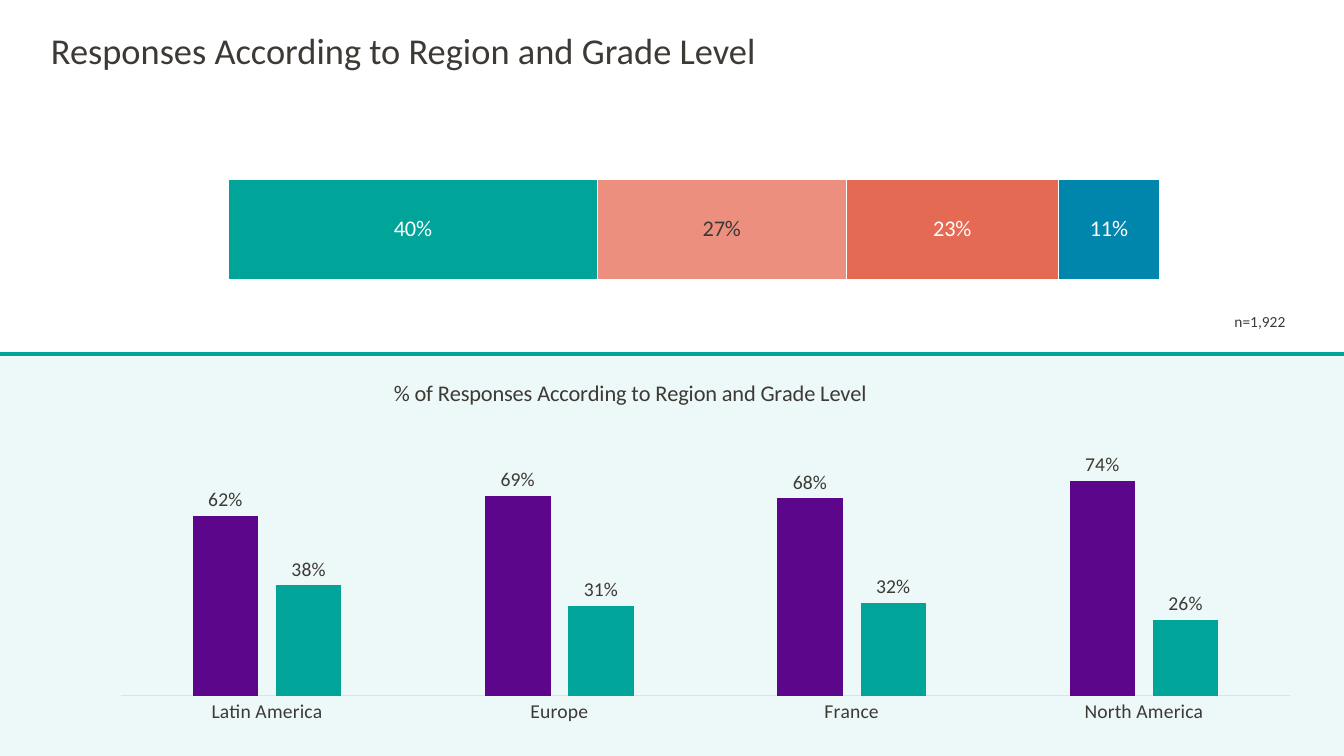
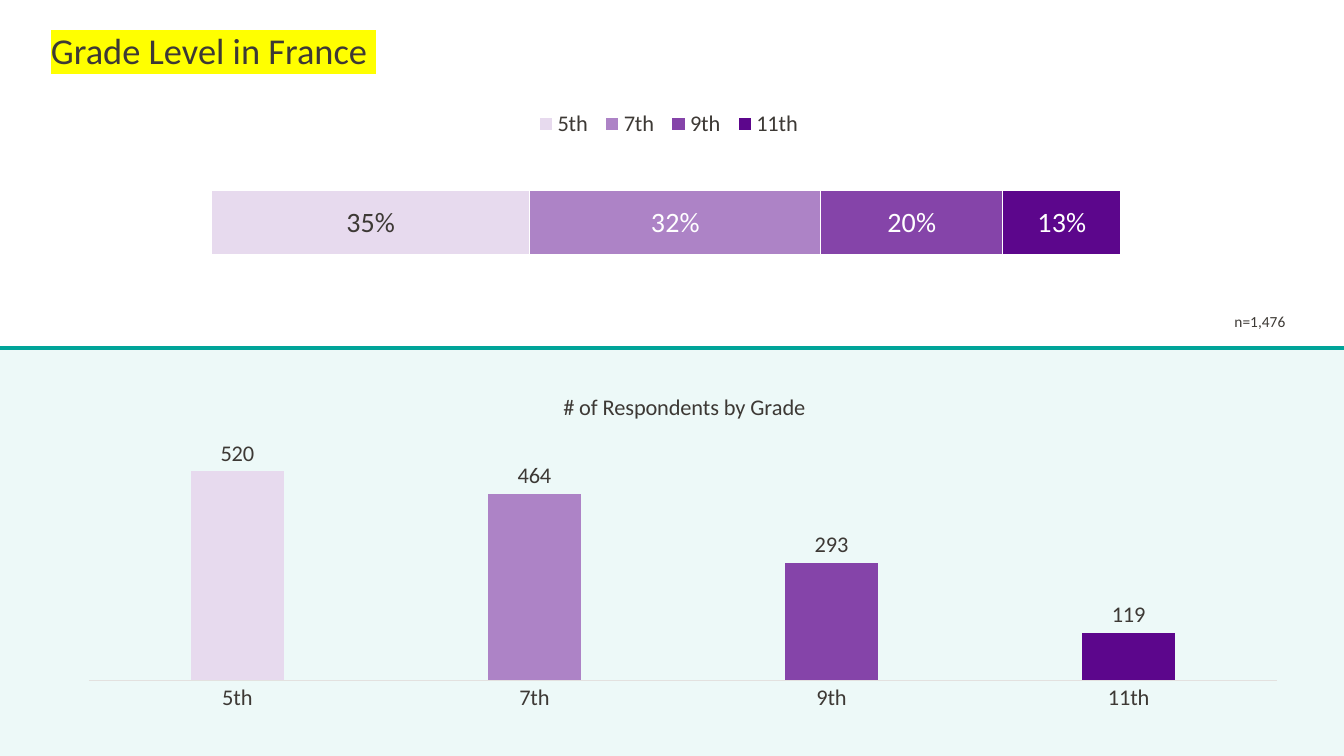
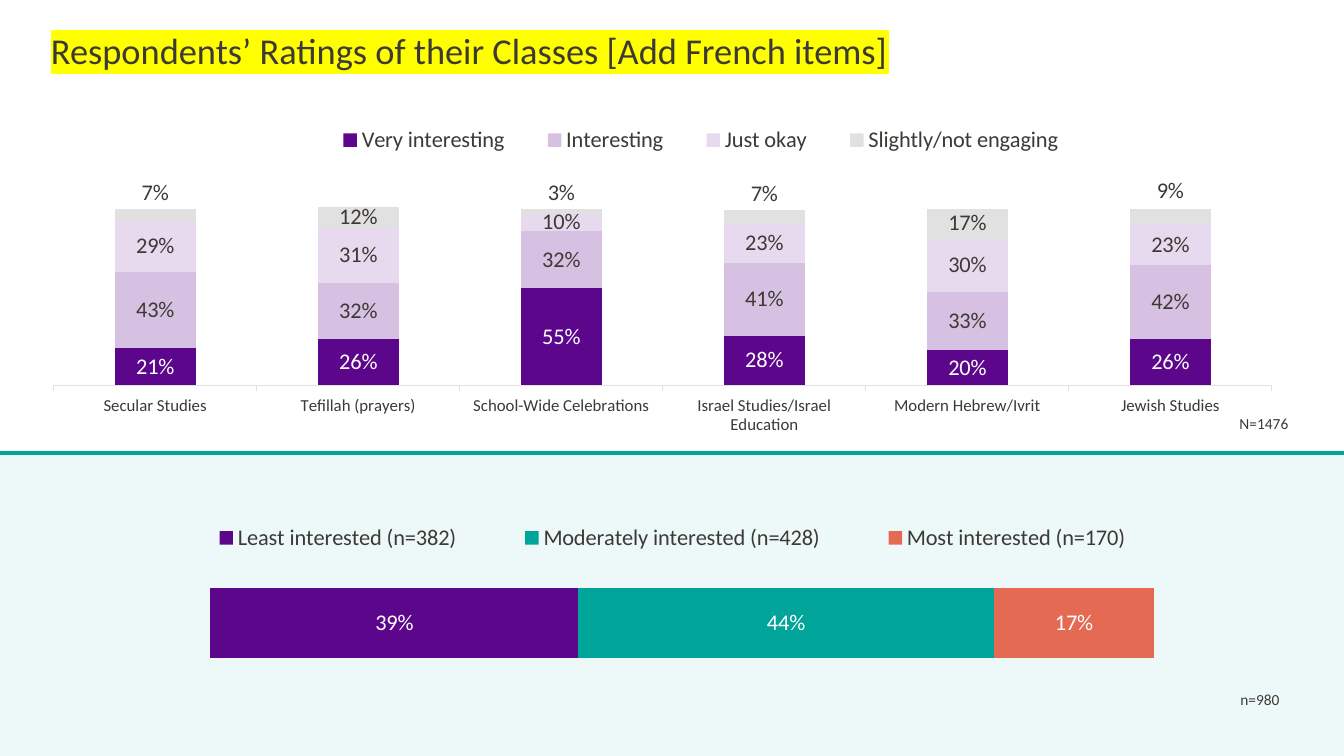
from lxml import etree
from pptx import Presentation
from pptx import util as u
from pptx.chart.data import CategoryChartData
from pptx.dml.color import RGBColor
from pptx.enum import chart as ch, shapes, text
from pptx.oxml import ns

INK, WHITE, BAND, AXIS = "3D3935", "FFFFFF", "EDF9F8", "E3E1DF"
TEAL, CORAL, SALMON, BLUE = "00A499", "E56A54", "EC8F7F", "0085AD"
PURPLE, VIOLET, MAUVE, LILAC, PALE, GREY = (
    "5C068C", "8544A9", "AD83C6", "D6C1E2", "E7DAEE", "E2E1E1")
YELLOW = "FFFF00"
FONT = "Calibri"
WIDTH, HEIGHT = 1344, 756
PERCENT, PERCENT_SIGN, COUNT = "0%", r"0\%", "0"
COLUMNS = ch.XL_CHART_TYPE.COLUMN_CLUSTERED
STACKED_COLUMNS = ch.XL_CHART_TYPE.COLUMN_STACKED
STACKED_BAR = ch.XL_CHART_TYPE.BAR_STACKED


def px(n):
    return u.Emu(round(n * 914400 / 100.8))


def rgb(value):
    return RGBColor.from_string(value)


def style(font, size, color=INK):
    font.name, font.size, font.bold = FONT, u.Pt(size), False
    font.color.rgb = rgb(color)


def fill(fmt, color):
    fmt.fill.solid()
    fmt.fill.fore_color.rgb = rgb(color)


def place(parent, index, box, edge=True, inner=False):
    """Give a chart part a manual layout; box holds fractions of the chart."""
    for old in parent.findall(ns.qn("c:layout")):
        parent.remove(old)
    layout = etree.Element(ns.qn("c:layout"))
    manual = etree.SubElement(layout, ns.qn("c:manualLayout"))
    settings = [("layoutTarget", "inner")] if inner else []
    if edge:
        settings += [("xMode", "edge"), ("yMode", "edge")]
    settings += zip("xywh", box)
    for tag, value in settings:
        etree.SubElement(manual, ns.qn("c:" + tag)).set("val", str(value))
    parent.insert(index, layout)


class Deck:
    def __init__(self):
        self.prs = Presentation()
        self.prs.slide_width, self.prs.slide_height = px(WIDTH), px(HEIGHT)

    def slide(self, title, split, highlight=None):
        """Start a slide: title above, tinted band and rule from split down."""
        self.s = self.prs.slides.add_slide(self.prs.slide_layouts[6])
        band = self.s.shapes.add_shape(
            shapes.MSO_SHAPE.RECTANGLE, 0, px(split), px(WIDTH), px(HEIGHT - split))
        band.shadow.inherit = False
        fill(band, BAND)
        band.line.fill.background()
        rule = self.s.shapes.add_connector(
            shapes.MSO_CONNECTOR.STRAIGHT, 0, px(split), px(WIDTH), px(split))
        rule.line.color.rgb, rule.line.width = rgb(TEAL), u.Pt(2.25)
        etree.SubElement(rule._element.spPr, ns.qn("a:effectLst"))
        p, r = self.text(title, (41, 6, 1159, 93), 26)
        p.line_spacing = 0.9
        if highlight:
            mark = etree.Element(ns.qn("a:highlight"))
            etree.SubElement(mark, ns.qn("a:srgbClr")).set("val", highlight)
            r.font._element.find(ns.qn("a:solidFill")).addnext(mark)

    def text(self, words, box, size):
        tf = self.s.shapes.add_textbox(*map(px, box)).text_frame
        tf.word_wrap = True
        tf.vertical_anchor = text.MSO_ANCHOR.MIDDLE
        p = tf.paragraphs[0]
        r = p.add_run()
        r.text = words
        style(r.font, size)
        return p, r

    def sample_size(self, words, x, y):
        p, _ = self.text(words, (x, y, 102, 29), 11)
        p.alignment = text.PP_ALIGN.CENTER

    def chart(self, kind, box, plot_box, cats, series, top, fmt, size=16, gap=150,
              overlap=100, outline=False):
        """Series rows are name, values, fill colour, label colour."""
        data = CategoryChartData()
        data.categories = cats
        for name, values, _, _ in series:
            data.add_series(name, values)
        chart = self.s.shapes.add_chart(kind, *map(px, box), data).chart
        style(chart.font, size)
        chart.has_title = chart.has_legend = False
        place(chart._chartSpace.chart.plotArea, 0, plot_box, inner=True)

        value_axis, cat_axis = chart.value_axis, chart.category_axis
        value_axis.minimum_scale, value_axis.maximum_scale = 0, top
        value_axis.has_major_gridlines = value_axis.visible = False
        cat_axis.visible = kind != STACKED_BAR
        cat_axis.major_tick_mark = (ch.XL_TICK_MARK.OUTSIDE if kind == STACKED_COLUMNS
                                    else ch.XL_TICK_MARK.NONE)
        cat_axis.format.line.color.rgb = rgb(AXIS)
        cat_axis.format.line.width = u.Pt(0.75)

        plot = chart.plots[0]
        plot.gap_width, plot.overlap, plot.vary_by_categories = gap, overlap, False
        for ser, (_, _, color, label_color) in zip(plot.series, series):
            fill(ser.format, color)
            if outline:
                ser.format.line.color.rgb = rgb(WHITE)
                ser.format.line.width = u.Pt(0.75)
            labels = ser.data_labels
            labels.show_value = True
            labels.number_format, labels.number_format_is_linked = fmt, False
            labels.position = (ch.XL_LABEL_POSITION.OUTSIDE_END if kind == COLUMNS
                               else ch.XL_LABEL_POSITION.CENTER)
            style(labels.font, size, label_color)
        return chart

    def chart_title(self, chart, words, x, y):
        r = chart.chart_title.text_frame.paragraphs[0].add_run()
        r.text = words
        style(r.font, 16)
        place(chart.chart_title._element, 1, (x, y))

    def legend(self, chart, box):
        chart.has_legend = True
        legend = chart.legend
        legend.position = ch.XL_LEGEND_POSITION.TOP
        legend.include_in_layout = False
        style(legend.font, 16)
        place(legend._element, 1, box)

    def lift_label(self, series, index, rise):
        """Move one value label up by a fraction of the chart height."""
        label = series.points[index].data_label
        style(label.font, 16)
        label.position = ch.XL_LABEL_POSITION.CENTER
        element = label._dLbl
        number = etree.Element(ns.qn("c:numFmt"), formatCode=PERCENT_SIGN,
                               sourceLinked="0")
        element.insert(1, number)
        place(element, 1, (0, -rise), edge=False)


def regions(deck):
    names = ["Latin America", "Europe", "France", "North America"]
    deck.slide("Responses According to Region and Grade Level", 354)
    shares = [("", [0.4], TEAL, WHITE), ("", [0.27], SALMON, INK),
              ("", [0.23], CORAL, WHITE), ("", [0.11], BLUE, WHITE)]
    deck.chart(STACKED_BAR, (0, 122, WIDTH, 226), (0.17, 0.21, 0.83, 0.53), [""],
               shares, 1.21, PERCENT, gap=20, outline=True)
    grades = [("", [0.62, 0.69, 0.68, 0.74], PURPLE, INK),
              ("", [0.38, 0.31, 0.32, 0.26], TEAL, INK)]
    columns = deck.chart(COLUMNS, (0, 374, WIDTH, 374), (0.09, 0.24, 0.87, 0.62),
                         names, grades, 0.8, PERCENT, size=14, gap=219, overlap=-27)
    deck.chart_title(columns, "% of Responses According to Region and Grade Level",
                     0.29, 0)
    deck.sample_size("n=1,922", 1209, 307)


def grade_levels(deck):
    names = ["5th", "7th", "9th", "11th"]
    colors = [PALE, MAUVE, VIOLET, PURPLE]
    deck.slide("Grade Level in France ", 348, YELLOW)
    shares = zip(names, [[35], [32], [20], [13]], colors, [INK, WHITE, WHITE, WHITE])
    bar = deck.chart(STACKED_BAR, (34, 98, 1269, 238), (0.14, 0.19, 0.86, 0.67), [""],
                     list(shares), 120, PERCENT_SIGN, size=20, outline=True)
    deck.legend(bar, (0.39, 0.05, 0.22, 0.12))
    columns = deck.chart(COLUMNS, (64, 378, 1238, 340), (0.02, 0.18, 0.96, 0.71), names,
                         [("", [520, 464, 293, 119], PURPLE, INK)],
                         600, COUNT, gap=219, overlap=-27)
    for i, color in enumerate(colors):
        fill(columns.plots[0].series[0].points[i].format, color)
    deck.chart_title(columns, "# of Respondents by Grade", 0.4, 0.03)
    deck.sample_size("n=1,476", 1209, 307)


def class_ratings(deck):
    classes = ["Secular Studies", "Tefillah (prayers)", "School-Wide Celebrations",
               "Israel Studies/Israel Education", "Modern Hebrew/Ivrit",
               "Jewish Studies"]
    ratings = [("Very interesting", [21, 26, 55, 28, 20, 26], PURPLE, WHITE),
               ("Interesting", [43, 32, 32, 41, 33, 42], LILAC, INK),
               ("Just okay", [29, 31, 10, 23, 30, 23], PALE, INK),
               ("Slightly/not engaging", [7, 12, 3, 7, 17, 9], GREY, INK)]
    deck.slide("Respondents’ Ratings of their Classes [Add French items]", 453, YELLOW)
    columns = deck.chart(STACKED_COLUMNS, (41, 100, 1269, 366),
                         (0.01, 0.2, 0.96, 0.58), classes, ratings, 120, PERCENT_SIGN)
    style(columns.category_axis.tick_labels.font, 12)
    deck.legend(columns, (0.21, 0.07, 0.62, 0.08))
    for index, rise in {0: 0.06, 2: 0.05, 3: 0.06, 5: 0.07}.items():
        deck.lift_label(columns.plots[0].series[3], index, rise)
    interest = [("Least interested (n=382)", [39], PURPLE, WHITE),
                ("Moderately interested (n=428)", [44], TEAL, WHITE),
                ("Most interested (n=170)", [17], CORAL, WHITE)]
    bar = deck.chart(STACKED_BAR, (41, 447, 1302, 303), (0.13, 0.29, 0.87, 0.58), [""],
                     interest, 120, PERCENT_SIGN)
    deck.legend(bar, (0.09, 0.25, 0.79, 0.1))
    deck.sample_size("n=980", 1209, 685)
    deck.sample_size("N=1476", 1213, 409)


def main():
    deck = Deck()
    for build in (regions, grade_levels, class_ratings):
        build(deck)
    deck.prs.save("out.pptx")


if __name__ == "__main__":
    main()
